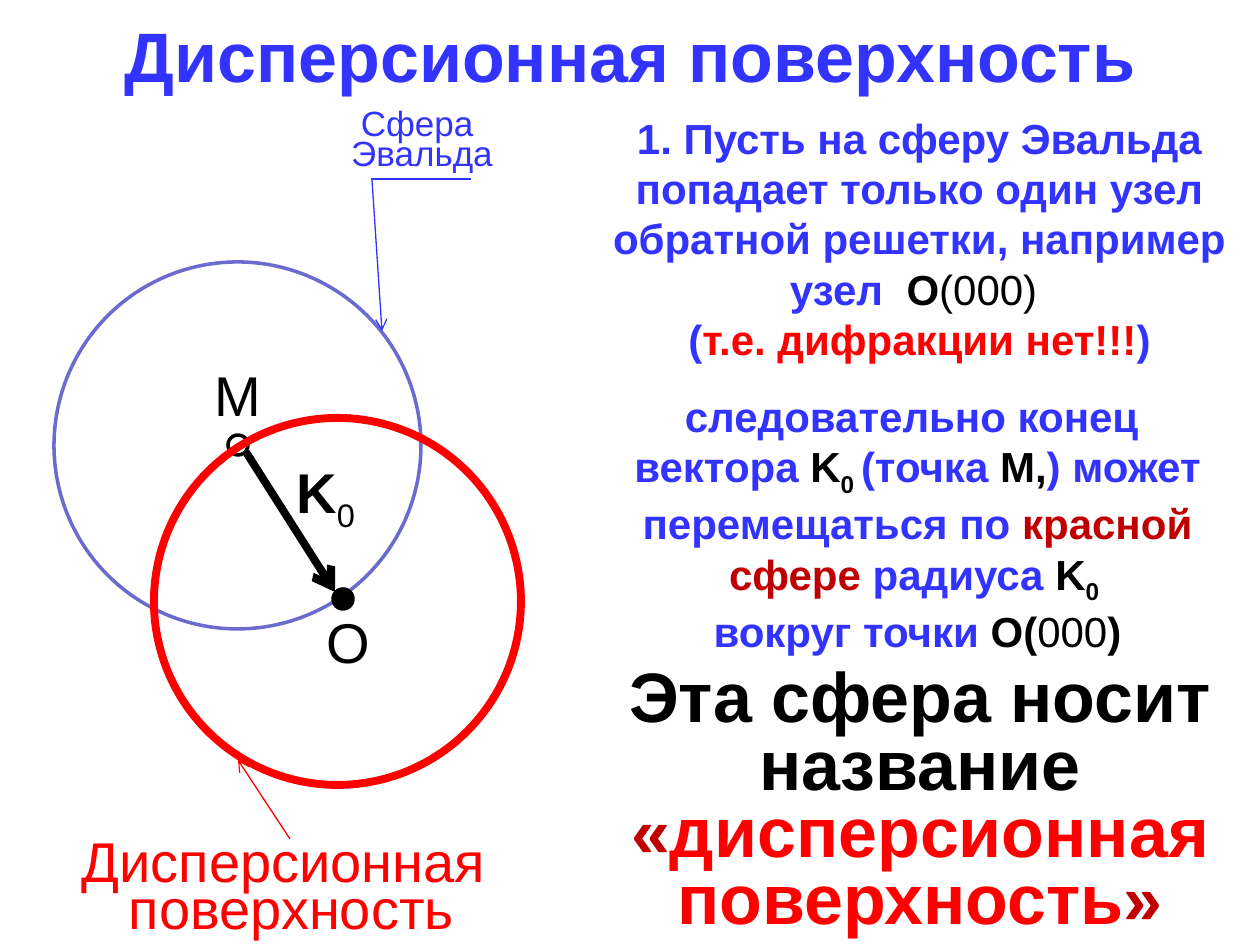
from lxml import etree
from pptx import Presentation
from pptx.dml.color import RGBColor
from pptx.enum.shapes import MSO_CONNECTOR, MSO_SHAPE
from pptx.enum.text import MSO_ANCHOR, MSO_AUTO_SIZE, PP_ALIGN
from pptx.oxml.ns import qn
from pptx.util import Emu, Pt

OVAL, STRAIGHT = MSO_SHAPE.OVAL, MSO_CONNECTOR.STRAIGHT
TOP, FIXED = MSO_ANCHOR.TOP, MSO_AUTO_SIZE.NONE
LEFT, CENTER = PP_ALIGN.LEFT, PP_ALIGN.CENTER
PX = 914400 // 126
BLUE, RED, DARK, BLACK, WHITE = "3333FF", "FF0000", "C00000", "000000", "FFFFFF"
FONT = "Arial"

# A run is (text, colour, flags): b for bold, s for subscript
TITLE = [[("Дисперсионная поверхность", BLUE, "b")]]

# left, top, width, height, size, line spacing, paragraphs
PANELS = [
    (580, 106, 679, 267, 24, 1, [
        [("1. Пусть на сферу Эвальда попадает только один узел "
          "обратной решетки, например узел  ", BLUE, "b"),
         ("O", BLACK, "b"), ("(000) ", BLACK, "")],
        [("(", BLUE, "b"), ("т.е. дифракции нет!!!", RED, "b"),
         (")", BLUE, "b")]]),
    (578, 384, 679, 267, 24, 1, [
        [("следовательно конец ", BLUE, "b")],
        [("вектора ", BLUE, "b"), ("K", BLACK, "b"), ("0 ", BLACK, "bs"),
         ("(точка ", BLUE, "b"), ("М,", BLACK, "b"),
         (") может перемещаться по ", BLUE, "b"),
         ("красной сфере ", DARK, "b"), ("радиуса ", BLUE, "b"),
         ("K", BLACK, "b"), ("0 ", BLACK, "bs")],
        [("вокруг точки ", BLUE, "b"), ("О(", BLACK, "b"),
         ("000", BLACK, ""), (")", BLACK, "b")]]),
    (580, 663, 680, 282, 40, 0.8, [
        [("Эта сфера носит название ", BLACK, "b"), ("«", DARK, "b"),
         ("дисперсионная поверхность", RED, "b"), ("»", DARK, "b")]]),
]

# left, top, width, height, size, line spacing, alignment, paragraphs
LABELS = [
    (338, 107, 168, 72, 20, 0.7, CENTER,
     [[("Сфера ", BLUE, "")], [("Эвальда", BLUE, "")]]),
    (202, 354, 72, 81, 32, 1, LEFT, [[("M", BLACK, "")]]),
    (314, 601, 69, 81, 32, 1, LEFT, [[("O", BLACK, "")]]),
    (67, 839, 449, 107, 32, 0.7, CENTER,
     [[("Дисперсионная ", RED, "")], [("поверхность", RED, "")]]),
    (284, 451, 87, 81, 32, 1, LEFT, [[("K", BLACK, "b"), ("0", BLACK, "s")]]),
]

# centre x, centre y, diameter, line colour, line width, fill
RINGS = [
    (238, 445, 20, BLACK, 2, None),
    (238, 445, 367, "6B6BCF", 2, None),
    (343, 599, 20, BLACK, 2, BLACK),
    (337, 601, 367, RED, 4.5, None),
]

# from x, from y, to x, to y, colour, width, arrowhead
LINES = [
    (372, 179, 382, 331, BLUE, 0.75, True),
    (371, 179, 471, 179, BLUE, 1, False),
    (290, 839, 238, 760, RED, 0.75, True),
    (246, 452, 335, 592, BLACK, 4.5, True),
]


def px(*vals):
    return [Emu(v * PX) for v in vals]


def rgb(code):
    return RGBColor.from_string(code)


def paint(shape, code):
    shape.fill.solid()
    shape.fill.fore_color.rgb = rgb(code)


def write(shape, paras, size, space=1, align=CENTER, wrap=True):
    frame = shape.text_frame
    frame.auto_size, frame.word_wrap = FIXED, wrap
    frame.vertical_anchor = TOP
    for i, runs in enumerate(paras):
        para = frame.add_paragraph() if i else frame.paragraphs[0]
        para.alignment, para.line_spacing = align, space
        for text, code, flags in runs:
            run = para.add_run()
            run.text = text
            font = run.font
            font.name, font.size, font.bold = FONT, Pt(size), "b" in flags
            font.color.rgb = rgb(code)
            if "s" in flags:
                run._r.get_or_add_rPr().set("baseline", "-25000")


def ring(shapes, x, y, size, code, width, fill):
    left, top = round(x - size / 2), round(y - size / 2)
    shape = shapes.add_shape(OVAL, *px(left, top, size, size))
    shape.shadow.inherit = False
    if fill:
        paint(shape, fill)
    else:
        shape.fill.background()
    shape.line.color.rgb, shape.line.width = rgb(code), Pt(width)


def link(shapes, x1, y1, x2, y2, code, width, arrow):
    line = shapes.add_connector(STRAIGHT, *px(x1, y1, x2, y2))
    line.line.color.rgb, line.line.width = rgb(code), Pt(width)
    props = line._element.spPr
    if arrow:
        etree.SubElement(props.find(qn("a:ln")), qn("a:tailEnd"), type="arrow")
    etree.SubElement(props, qn("a:effectLst"))


def main():
    deck = Presentation()
    deck.slide_width, deck.slide_height = px(1260, 945)
    shapes = deck.slides.add_slide(deck.slide_layouts[5]).shapes

    title = shapes.title
    title.left, title.top, title.width, title.height = px(0, 6, 1260, 97)
    write(title, TITLE, 40)

    for item in RINGS:
        ring(shapes, *item)
    for item in LINES:
        link(shapes, *item)
    for *place, size, space, align, paras in LABELS:
        write(shapes.add_textbox(*px(*place)), paras, size, space, align, False)
    for *place, size, space, paras in PANELS:
        panel = shapes.add_textbox(*px(*place))
        paint(panel, WHITE)
        write(panel, paras, size, space)

    deck.save("out.pptx")


if __name__ == "__main__":
    main()
